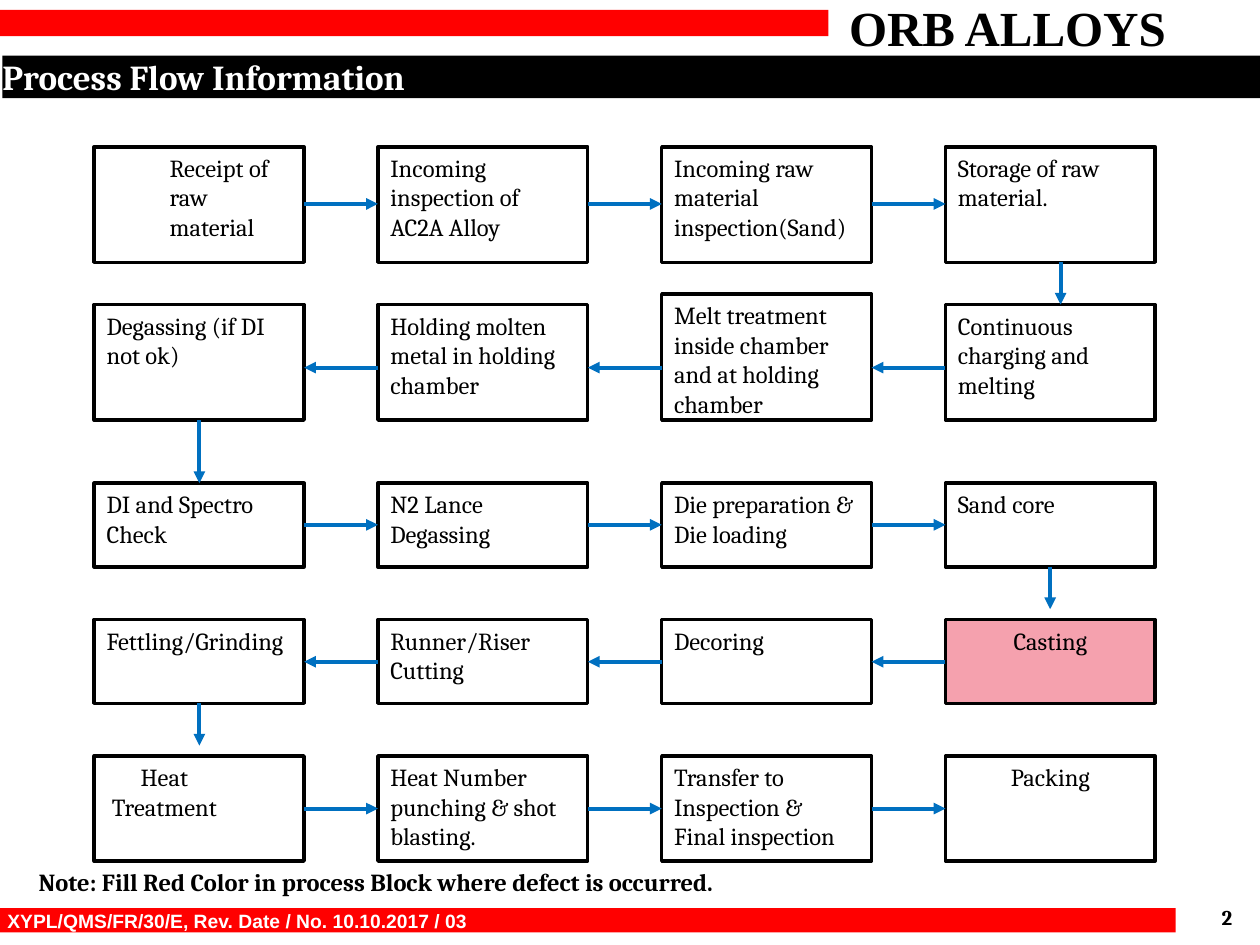
from dataclasses import dataclass
from lxml.etree import SubElement
from pptx import Presentation
from pptx.dml.color import RGBColor
from pptx.enum.shapes import MSO_CONNECTOR, MSO_SHAPE
from pptx.enum.text import MSO_ANCHOR, MSO_AUTO_SIZE, PP_ALIGN
from pptx.oxml.ns import qn
from pptx.util import Cm, Pt


@dataclass(frozen=True)
class Theme:
    black: str = "000000"
    white: str = "FFFFFF"
    red: str = "FF0000"
    pink: str = "F5A1AE"
    blue: str = "0070C0"
    body: str = "Cambria"
    brand: str = "Times New Roman"
    foot: str = "Arial"
    logo: int = 28
    head: int = 20
    text: int = 14
    page: int = 12
    small: int = 11
    edge: float = 2
    wire: float = 2.25


class Sheet:
    def __init__(self, slide, theme):
        self.slide = slide
        self.theme = theme

    def fit(self, shape, text, size, color=None, font=None, bold=False,
            align=PP_ALIGN.LEFT, anchor=MSO_ANCHOR.MIDDLE, inset=True):
        frame = shape.text_frame
        frame.text = text
        frame.word_wrap = True
        frame.auto_size = MSO_AUTO_SIZE.NONE
        frame.vertical_anchor = anchor
        if not inset:
            frame.margin_left = frame.margin_right = 0
            frame.margin_top = frame.margin_bottom = 0
        for para in frame.paragraphs:
            para.alignment = align
            for run in para.runs:
                run.font.name = font or self.theme.body
                run.font.size = Pt(size)
                run.font.bold = bold
                run.font.color.rgb = RGBColor.from_string(color or self.theme.black)
        return frame

    def title(self, text, left, top, width, height):
        shape = self.slide.shapes.title
        shape.left, shape.top = Cm(left), Cm(top)
        shape.width, shape.height = Cm(width), Cm(height)
        shape.fill.solid()
        shape.fill.fore_color.rgb = RGBColor.from_string(self.theme.black)
        self.fit(shape, text, self.theme.head, self.theme.white,
                 bold=True, inset=False)

    def bar(self, left, top, width, height, fill):
        shape = self.slide.shapes.add_shape(
            MSO_SHAPE.RECTANGLE, Cm(left), Cm(top), Cm(width), Cm(height))
        shape.shadow.inherit = False
        shape.fill.solid()
        shape.fill.fore_color.rgb = RGBColor.from_string(fill)
        shape.line.fill.background()
        return shape

    def step(self, text, left, top, height, fill, align):
        shape = self.bar(left, top, WIDE, height, fill)
        shape.line.color.rgb = RGBColor.from_string(self.theme.black)
        shape.line.width = Pt(self.theme.edge)
        return self.fit(shape, text, self.theme.text, align=align,
                        anchor=MSO_ANCHOR.TOP)

    def label(self, text, left, top, width, height, size, **style):
        box = self.slide.shapes.add_textbox(
            Cm(left), Cm(top), Cm(width), Cm(height))
        self.fit(box, text, size, bold=True, **style)

    def arrow(self, x1, y1, x2, y2):
        wire = self.slide.shapes.add_connector(
            MSO_CONNECTOR.STRAIGHT, Cm(x1), Cm(y1), Cm(x2), Cm(y2))
        wire.line.color.rgb = RGBColor.from_string(self.theme.blue)
        wire.line.width = Pt(self.theme.wire)
        SubElement(wire.get_or_add_ln(), qn("a:tailEnd"), type="triangle")
        SubElement(wire.element.spPr, qn("a:effectLst"))


LEFT, PITCH, WIDE = 1.9, 5.72, 4.23

ROWS = [
    (2.96, 2.33, 4.11, ["Receipt of raw material",
                        "Incoming inspection of\nAC2A Alloy",
                        "Incoming raw material inspection(Sand)",
                        "Storage of raw material."]),
    (6.14, 2.33, 7.41, ["Degassing (if DI not ok)",
                        "Holding molten metal in holding chamber",
                        "Melt treatment inside chamber and at holding chamber",
                        "Continuous charging and melting"]),
    (9.74, 1.69, 10.58, ["DI and Spectro Check", "N2 Lance Degassing",
                         "Die preparation & Die loading", "Sand core"]),
    (12.49, 1.69, 13.34, ["Fettling/Grinding", "Runner/Riser Cutting",
                          "Decoring", "Casting"]),
    (15.24, 2.12, 16.3, ["Heat\nTreatment",
                         "Heat Number punching & shot blasting.",
                         "Transfer to Inspection &\vFinal inspection",
                         "Packing"]),
]
TURNS = [(21.38, 5.29, 6.14), (4.02, 8.47, 9.74),
         (21.17, 11.43, 12.28), (4.02, 14.18, 15.03)]
MIDDLE = {"Casting", "Packing", "Heat\nTreatment"}
TALL = {"Melt treatment inside chamber and at holding chamber": 0.21}


def main():
    deck = Presentation()
    deck.slide_width, deck.slide_height = Cm(25.4), Cm(19.05)
    theme = Theme()
    sheet = Sheet(deck.slides.add_slide(deck.slide_layouts[5]), theme)

    sheet.bar(0, 0.2, 16.7, 0.53, theme.red)
    sheet.bar(0, 18.31, 23.7, 0.49, theme.red)
    sheet.label("ORB ALLOYS", 16.08, -0.2, 8.46, 1.47, theme.logo,
                font=theme.brand, align=PP_ALIGN.CENTER)
    sheet.label("XYPL/QMS/FR/30/E, Rev. Date / No. 10.10.2017 / 03",
                -0.1, 18.19, 22.83, 0.74, theme.small,
                color=theme.white, font=theme.foot)
    sheet.label("2", 23.47, 18.24, 1.37, 0.51, theme.page,
                align=PP_ALIGN.RIGHT, inset=False)
    sheet.title("Process Flow Information", 0.05, 1.12, 25.35, 0.86)

    frames = {}
    for row, (top, height, level, names) in enumerate(ROWS):
        for col, name in enumerate(names):
            left = LEFT + col * PITCH
            rise = TALL.get(name, 0)
            fill = theme.pink if name == "Casting" else theme.white
            align = PP_ALIGN.CENTER if name in MIDDLE else PP_ALIGN.LEFT
            frames[name] = sheet.step(name, left, top - rise, height + rise,
                                      fill, align)
            if col:
                ends = [left - PITCH + WIDE, left]
                start, stop = ends[::-1] if row % 2 else ends
                sheet.arrow(start, level, stop, level)
    for x, start, stop in TURNS:
        sheet.arrow(x, start, x, stop)

    for name, side, gap in (("Receipt of raw material", "marL", 1.27),
                            ("Heat\nTreatment", "marR", 1.4)):
        props = frames[name].paragraphs[0]._p.get_or_add_pPr()
        props.set(side, str(Cm(gap)))

    sheet.label("Note: Fill Red Color in process Block where defect is occurred.",
                0.53, 17.35, 24.13, 0.86, theme.text)
    deck.save("out.pptx")


if __name__ == "__main__":
    main()
